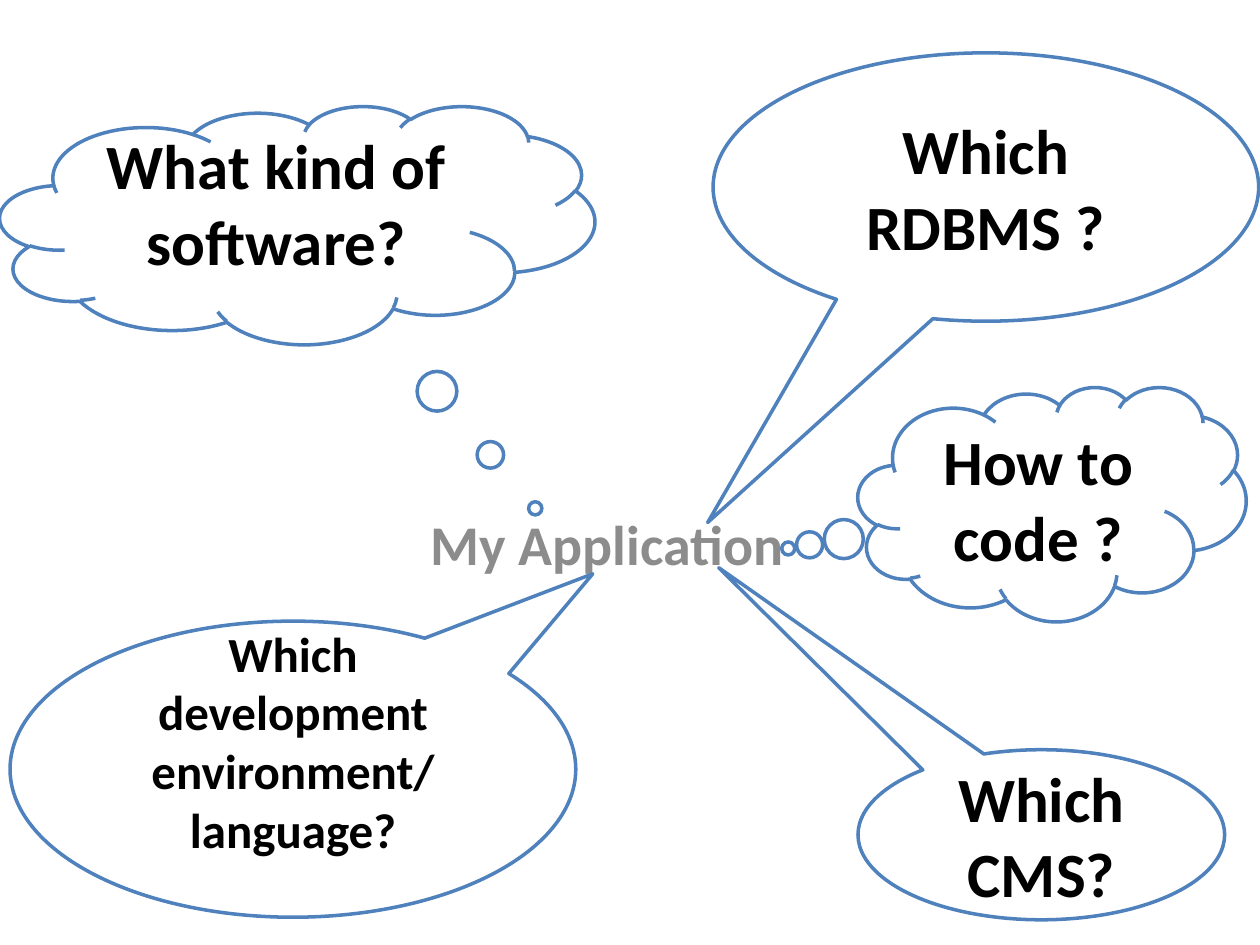
"""Build a slide of questions that surround one application."""

from pptx import Presentation
from pptx.dml.color import RGBColor
from pptx.enum.shapes import MSO_SHAPE
from pptx.enum.text import MSO_ANCHOR, PP_ALIGN
from pptx.util import Inches, Pt

CLOUD = MSO_SHAPE.CLOUD_CALLOUT
ELLIPSE = MSO_SHAPE.OVAL_CALLOUT
CENTER = PP_ALIGN.CENTER
MIDDLE = MSO_ANCHOR.MIDDLE
COLORS = {"fill": "FFFFFF", "line": "4F81BD", "text": "000000", "subject": "8C8C8C"}


class QuestionSlide:
    """Hold the style and the current slide."""

    def __init__(self, presentation):
        self.slide = presentation.slides.add_slide(presentation.slide_layouts[0])
        self.font_format = {"name": "Calibri", "bold": True}
        title = self.slide.shapes.title
        title.element.getparent().remove(title.element)

    def color(self, name):
        return RGBColor.from_string(COLORS[name])

    def add_label(self, shape, text, size, color):
        shape.text_frame.word_wrap = True
        paragraph = shape.text_frame.paragraphs[0]
        paragraph.alignment = CENTER
        run = paragraph.add_run()
        run.text = text
        for name, value in {**self.font_format, "size": Pt(size)}.items():
            setattr(run.font, name, value)
        run.font.color.rgb = self.color(color)

    def subject(self, text, box):
        shape = self.slide.placeholders[1]
        for name, value in zip(("left", "top", "width", "height"), box):
            setattr(shape, name, Inches(value))
        self.add_label(shape, text, 32, "subject")

    def callout(self, kind, text, box, pointer, size=36, bottom=0.05):
        shape = self.slide.shapes.add_shape(kind, *map(Inches, box))
        for index, value in enumerate(pointer):
            shape.adjustments[index] = value
        shape.shadow.inherit = False
        shape.fill.solid()
        shape.fill.fore_color.rgb = self.color("fill")
        shape.line.color.rgb = self.color("line")
        shape.line.width = Pt(2)
        shape.text_frame.vertical_anchor = MIDDLE
        shape.text_frame.margin_bottom = Inches(bottom)
        self.add_label(shape, text, size, "text")


def main():
    presentation = Presentation()
    presentation.slide_width = Inches(10)
    presentation.slide_height = Inches(7.5)
    page = QuestionSlide(presentation)
    page.subject("My Application", (1.32, 3.99, 7, 0.76))
    page.callout(ELLIPSE, "Which RDBMS ?", (5.66, 0.42, 4.33, 2.13), (-0.51, 1.25))
    page.callout(CLOUD, "What kind of software?", (0, 0.84, 4.72, 1.89), (0.4, 1.19),
                 bottom=0.32)
    page.callout(ELLIPSE, "Which CMS?", (6.81, 5.95, 2.91, 1.35), (-0.88, -1.57))
    page.callout(ELLIPSE, "Which development environment/ language?",
                 (0.08, 4.93, 4.49, 2.35), (0.53, -0.66), size=28, bottom=0.5)
    page.callout(CLOUD, "How to code ?", (6.81, 3.07, 3.08, 1.86), (-0.68, 0.19))
    presentation.save("out.pptx")


if __name__ == "__main__":
    main()
